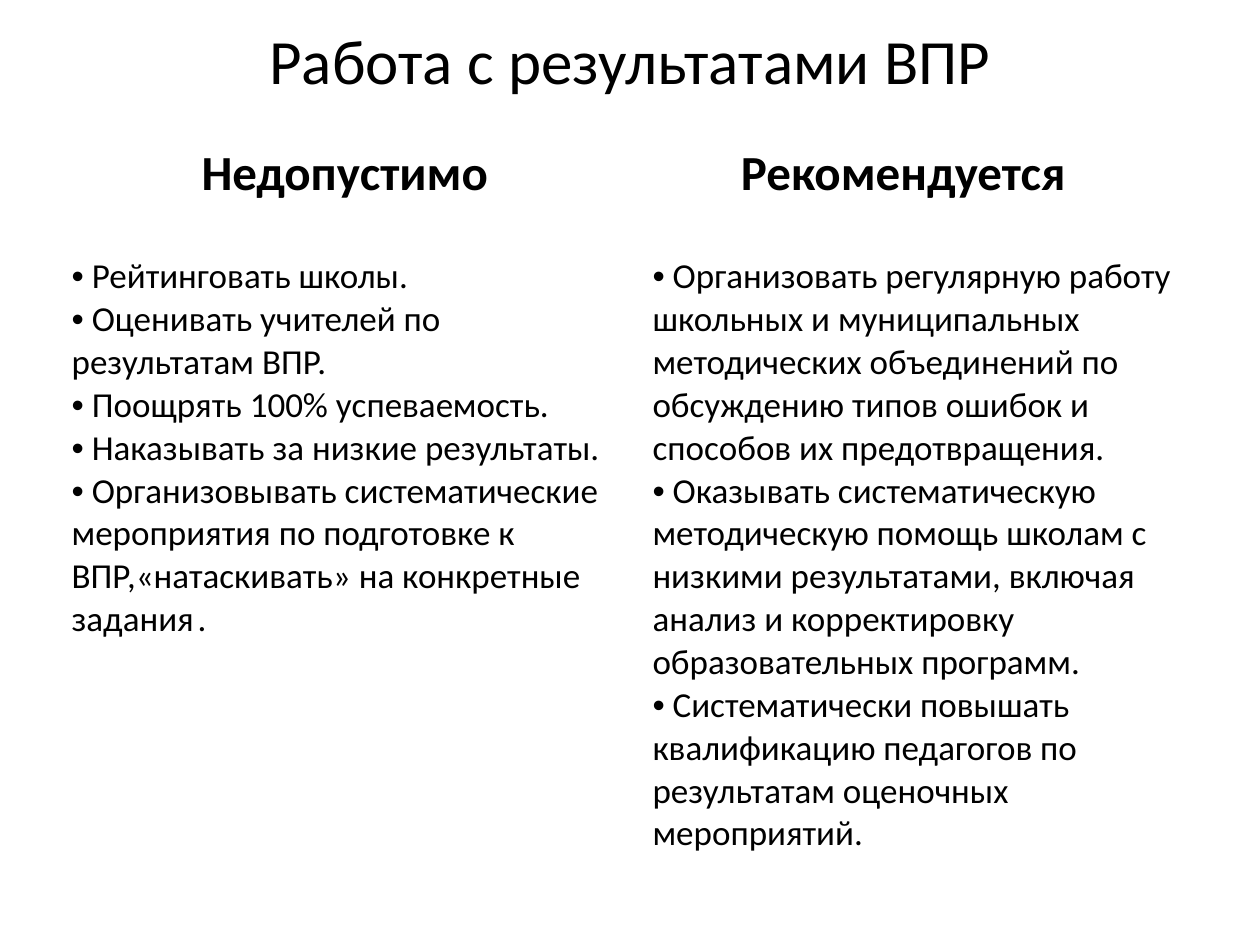
"""Build the slide on what to do and not to do with test results."""
from lxml.etree import SubElement
from pptx import Presentation
from pptx.dml.color import RGBColor
from pptx.enum.text import MSO_ANCHOR, PP_ALIGN
from pptx.oxml.ns import qn
from pptx.util import Cm, Pt


def style(p, size, bold=False, align=PP_ALIGN.LEFT):
    p.alignment = align
    for r in p.runs:
        r.font.name = "Calibri"
        r.font.size = Pt(size)
        r.font.bold = bold
        r.font.color.rgb = RGBColor.from_string("000000")


def add_bullet(p):
    pPr = p._p.get_or_add_pPr()
    pPr.set("marL", "0")
    pPr.set("indent", "0")
    SubElement(pPr, qn("a:buFont")).set("typeface", "Arial")
    SubElement(pPr, qn("a:buChar")).set("char", "•")


columns = [
    ("Недопустимо", 0.45, [
        "Рейтинговать школы.",
        "Оценивать учителей по результатам ВПР.",
        "Поощрять 100% успеваемость.",
        "Наказывать за низкие результаты.",
        "Организовывать систематические мероприятия по подготовке к "
        "ВПР,«натаскивать» на конкретные задания\t.",
    ]),
    ("Рекомендуется", 1.35, [
        "Организовать регулярную работу школьных и муниципальных методических "
        "объединений по обсуждению типов ошибок и способов их предотвращения.",
        "Оказывать систематическую методическую помощь школам с низкими "
        "результатами, включая анализ и корректировку образовательных программ.",
        "Систематически повышать квалификацию педагогов по результатам "
        "оценочных мероприятий.",
    ]),
]

prs = Presentation()
prs.slide_width, prs.slide_height = Cm(25.4), Cm(19.05)
s = prs.slides.add_slide(prs.slide_layouts[5])

title = s.shapes.title
title.left, title.top, title.width, title.height = Cm(1.27), Cm(0), Cm(22.86), Cm(2.39)
tf = title.text_frame
tf.text = "Работа с результатами ВПР"
tf.vertical_anchor = MSO_ANCHOR.MIDDLE
style(tf.paragraphs[0], 36, align=PP_ALIGN.CENTER)

table = s.shapes.add_table(2, 2, Cm(1.19), Cm(2.77), Cm(23.42), Cm(15.06)).table
table.horz_banding = False
table.rows[0].height, table.rows[1].height = Cm(2.25), Cm(12.81)

for col, (heading, right_margin, items) in enumerate(columns):
    table.columns[col].width = Cm(11.71)
    head, body = table.cell(0, col), table.cell(1, col)
    for cell in (head, body):
        cell.fill.solid()
        cell.fill.fore_color.rgb = RGBColor.from_string("FFFFFF")

    head.text_frame.text = heading
    head.margin_right = Cm(right_margin)
    style(head.text_frame.paragraphs[0], 28, bold=True, align=PP_ALIGN.CENTER)

    body.text_frame.text = "\n".join(f" {item}" for item in items)
    for p in body.text_frame.paragraphs:
        style(p, 20)
        add_bullet(p)

prs.save("out.pptx")
